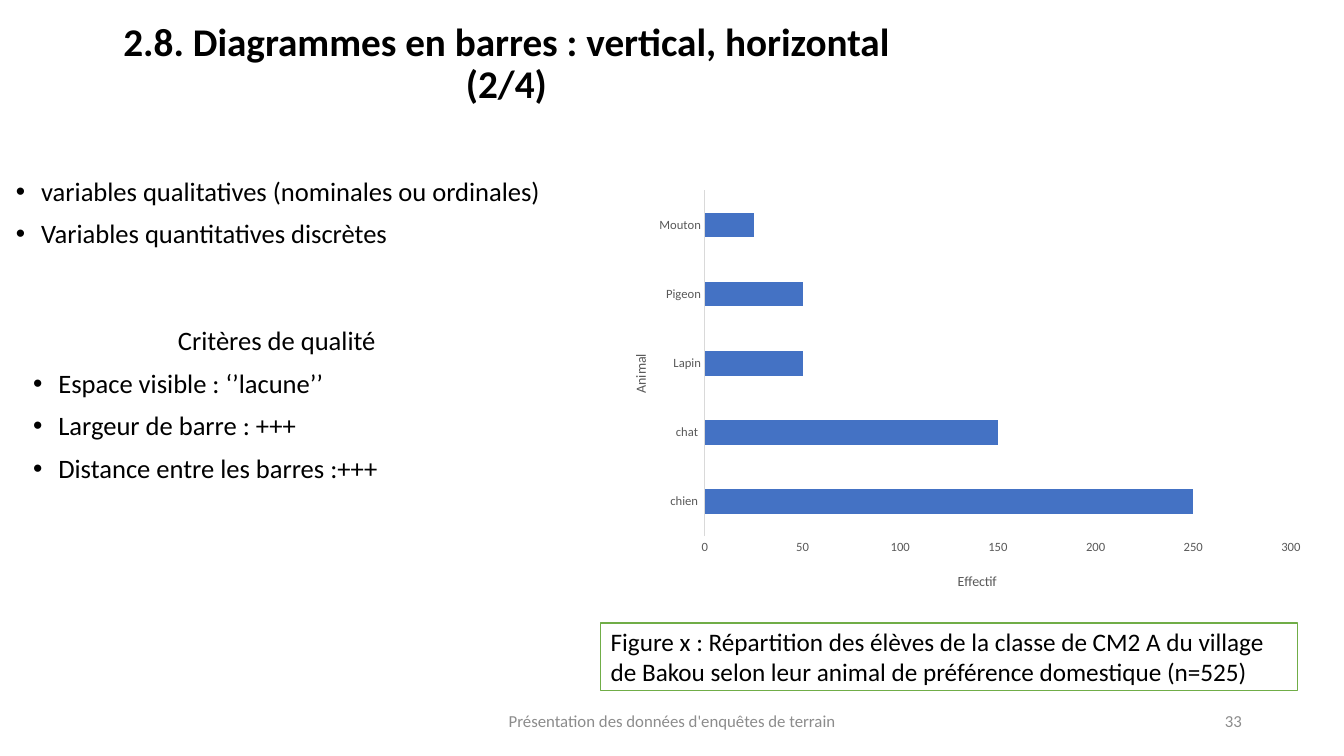
import pptx
import pptx.chart.data
import pptx.dml.color
import pptx.enum.chart
import pptx.enum.shapes
import pptx.enum.text
import pptx.oxml
import pptx.oxml.ns
import pptx.util

Pt = pptx.util.Pt
qn = pptx.oxml.ns.qn
ALIGN = pptx.enum.text.PP_ALIGN
ANCHOR = pptx.enum.text.MSO_ANCHOR
COLORS = {"text": "000000", "paper": "FFFFFF", "bar": "4472C4", "frame": "70AD47",
          "axis": "D9D9D9", "label": "595959", "footer": "8C8C8C"}


def rgb(name):
    return pptx.dml.color.RGBColor.from_string(COLORS[name])


def style_font(font, size, color, bold=False):
    font.name, font.size, font.bold = "Calibri", Pt(size), bold
    font.color.rgb = rgb(color)


def write(frame, *lines, size=19, color="text", bold=False, align=ALIGN.LEFT,
          anchor=ANCHOR.TOP, line_spacing=None, space_before=0, bullets_from=None):
    """Fill a text frame with one paragraph per line."""
    frame.word_wrap = True
    frame.auto_size = pptx.enum.text.MSO_AUTO_SIZE.NONE
    frame.vertical_anchor = anchor
    for index, line in enumerate(lines):
        paragraph = frame.paragraphs[0] if index == 0 else frame.add_paragraph()
        bulleted = bullets_from is not None and index >= bullets_from
        paragraph.alignment = ALIGN.LEFT if bulleted else align
        paragraph.line_spacing = line_spacing
        paragraph.space_before = Pt(space_before)
        run = paragraph.add_run()
        run.text = line
        style_font(run.font, size, color, bold)
        if bulleted:
            properties = paragraph._p.get_or_add_pPr()
            properties.set("marL", str(Pt(18)))
            properties.set("indent", str(Pt(-18)))
            for tag, key, value in (("a:buFont", "typeface", "Arial"), ("a:buChar", "char", "•")):
                properties.append(properties.makeelement(qn(tag), {key: value}))


def place(parent, index, **settings):
    """Give a chart part a manual layout."""
    for layout in parent.findall(qn("c:layout")):
        parent.remove(layout)
    layout = parent.makeelement(qn("c:layout"), {})
    manual = layout.makeelement(qn("c:manualLayout"), {})
    layout.append(manual)
    for tag, value in settings.items():
        manual.append(manual.makeelement(qn("c:" + tag), {"val": str(value)}))
    parent.insert(index, layout)


class SlideBuilder:
    """Add styled elements to one slide, with lengths in points."""

    def __init__(self, deck):
        self.slide = deck.slides.add_slide(deck.slide_layouts[5])

    def title(self, box, text):
        heading = self.slide.shapes.title
        heading.left, heading.top, heading.width, heading.height = map(Pt, box)
        write(heading.text_frame, text, size=28, bold=True, align=ALIGN.CENTER,
              anchor=ANCHOR.MIDDLE, line_spacing=0.9)

    def text(self, box, *lines, **style):
        write(self.slide.shapes.add_textbox(*map(Pt, box)).text_frame, *lines, **style)

    def caption(self, box, text):
        frame = self.slide.shapes.add_shape(
            pptx.enum.shapes.MSO_SHAPE.RECTANGLE, *map(Pt, box))
        frame.shadow.inherit = False
        frame.fill.solid()
        frame.fill.fore_color.rgb = rgb("paper")
        frame.line.color.rgb = rgb("frame")
        frame.line.width = Pt(1)
        write(frame.text_frame, text, size=18, anchor=ANCHOR.MIDDLE)

    def axis(self, axis, title, x, y, rotation):
        axis.has_major_gridlines = False
        axis.major_tick_mark = axis.minor_tick_mark = pptx.enum.chart.XL_TICK_MARK.NONE
        style_font(axis.tick_labels.font, 9, "label")
        heading = axis.axis_title
        write(heading.text_frame, title, size=10, color="label", align=ALIGN.CENTER)
        body = heading._element.find(".//" + qn("a:bodyPr"))
        body.set("rot", str(rotation * 60000))
        body.set("vert", "horz")
        place(heading._element, 1, xMode="edge", yMode="edge", x=x, y=y)

    def bar_chart(self, box, series, counts, category_title, value_title):
        data = pptx.chart.data.CategoryChartData()
        data.categories = list(counts)
        data.add_series(series, list(counts.values()))
        chart = self.slide.shapes.add_chart(
            pptx.enum.chart.XL_CHART_TYPE.BAR_CLUSTERED, *map(Pt, box), data).chart
        chart.has_legend = chart.has_title = False
        style_font(chart.font, 10, "text")
        plot = chart.plots[0]
        plot.gap_width = 182
        plot.vary_by_categories = False
        bars = plot.series[0].format.fill
        bars.solid()
        bars.fore_color.rgb = rgb("bar")
        self.axis(chart.category_axis, category_title, 0.04, 0.46, -90)
        self.axis(chart.value_axis, value_title, 0.5, 0.93, 0)
        chart.category_axis.format.line.color.rgb = rgb("axis")
        chart.category_axis.format.line.width = Pt(0.75)
        chart.value_axis.format.line.fill.background()
        chart.value_axis.minimum_scale = 0
        chart.value_axis.maximum_scale = 300
        chart.value_axis.major_unit = 50
        place(chart._chartSpace.find(".//" + qn("c:plotArea")), 0, layoutTarget="inner",
              xMode="edge", yMode="edge", x=0.147, y=0.113, w=0.827, h=0.744)


def main():
    deck = pptx.Presentation()
    deck.slide_width, deck.slide_height = Pt(960), Pt(540)
    page = SlideBuilder(deck)
    page.title((60, 14.4, 603.4, 64), "2.8. Diagrammes en barres : vertical, horizontal (2/4)")
    page.text((4.3, 123.8, 392.4, 75.6), "variables qualitatives (nominales ou ordinales)",
              "Variables quantitatives discrètes",
              line_spacing=0.9, space_before=10, bullets_from=0)
    page.text((16.6, 230.4, 362.2, 128.9), "Critères de qualité", "Espace visible : ‘’lacune’’",
              "Largeur de barre : +++", "Distance entre les barres :+++",
              align=ALIGN.CENTER, line_spacing=0.9, space_before=10, bullets_from=1)
    counts = {"chien ": 250, "chat ": 150, "Lapin": 50, "Pigeon": 50, "Mouton": 25}
    page.bar_chart((429.1, 98.6, 506.2, 331.9), "Series 1", counts, "Animal", "Effectif")
    page.caption((429.1, 445, 497.5, 48.2),
                 "Figure x : Répartition des élèves de la classe de CM2 A du village de Bakou "
                 "selon leur animal de préférence domestique (n=525)")
    footer = {"size": 12, "color": "footer", "anchor": ANCHOR.MIDDLE}
    page.text((318.2, 500.4, 324, 28.8), "Présentation des données d'enquêtes de terrain",
              align=ALIGN.CENTER, **footer)
    page.text((678.2, 500.4, 216, 28.8), "33", align=ALIGN.RIGHT, **footer)
    deck.save("out.pptx")


if __name__ == "__main__":
    main()
